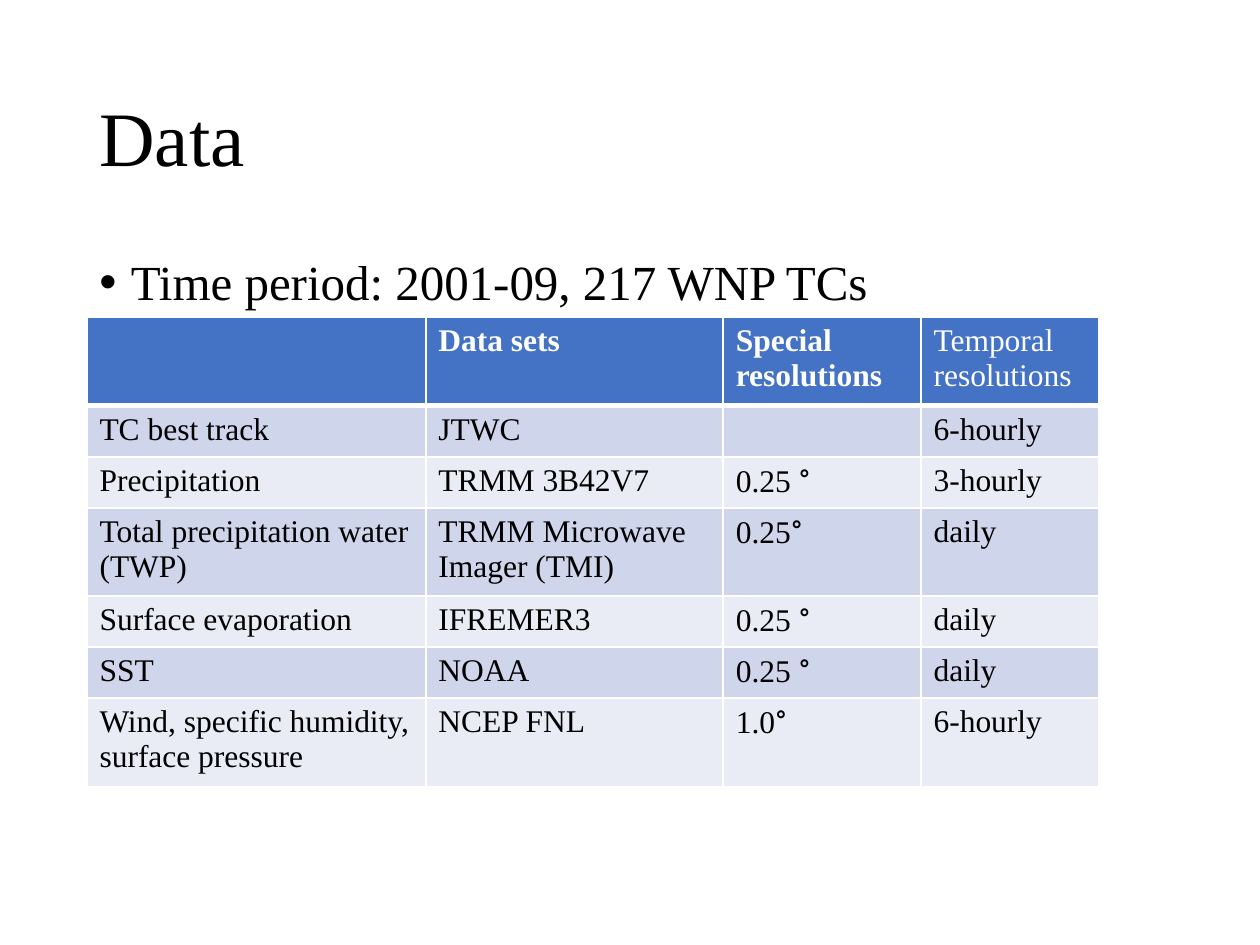
from dataclasses import dataclass

from lxml import etree
from pptx import Presentation
from pptx.dml.color import RGBColor
from pptx.enum.text import MSO_ANCHOR, PP_ALIGN
from pptx.oxml.ns import qn
from pptx.util import Inches, Pt

MIDDLE = MSO_ANCHOR.MIDDLE
TOP = MSO_ANCHOR.TOP
JUSTIFY = PP_ALIGN.JUSTIFY

SLIDE_WIDTH, SLIDE_HEIGHT = Inches(10), Inches(7.5)
MARGIN = 0.069  # share of the slide's width
SERIF, DEGREE_FONT = "Times New Roman", "Roboto"
BLACK, WHITE = "000000", "FFFFFF"
HEADER_FILL = "4472C4"
BAND_FILLS = ("CFD5EA", "E9EBF5")
COLUMN_WIDTHS = (2.69, 2.36, 1.57, 1.41)
ONE_LINE, TWO_LINES = 0.405, 0.65
DEGREE = "°"


@dataclass(frozen=True)
class DataSource:
    variable: str
    data_set: str
    spatial: str
    temporal: str
    height: float = ONE_LINE

    def cells(self) -> tuple[str, ...]:
        return self.variable, self.data_set, self.spatial, self.temporal


HEADER = DataSource("", "Data sets", "Special resolutions", "Temporal resolutions", TWO_LINES)
SOURCES = (
    DataSource("TC best track", "JTWC", "", "6-hourly"),
    DataSource("Precipitation", "TRMM 3B42V7", "0.25 °", "3-hourly"),
    DataSource("Total precipitation water\n(TWP)", "TRMM Microwave Imager (TMI)",
               "0.25°", "daily", TWO_LINES),
    DataSource("Surface evaporation", "IFREMER3", "0.25 °", "daily"),
    DataSource("SST", "NOAA", "0.25 °", "daily"),
    DataSource("Wind, specific humidity, surface pressure", "NCEP FNL",
               "1.0°", "6-hourly", TWO_LINES),
)


def rgb(hex_code: str) -> RGBColor:
    return RGBColor.from_string(hex_code)


def style_run(run, size: float, color: str, bold: bool = False, font: str = SERIF) -> None:
    run.font.name = font
    run.font.size = Pt(size)
    run.font.bold = bold
    run.font.color.rgb = rgb(color)


def add_heading(slide, text: str, top: float, height: float, size: float, anchor):
    """Add a text box across the slide, top and height as shares; return its paragraph."""
    box = slide.shapes.add_textbox(
        int(MARGIN * SLIDE_WIDTH), int(top * SLIDE_HEIGHT),
        int((1 - 2 * MARGIN) * SLIDE_WIDTH), int(height * SLIDE_HEIGHT))
    frame = box.text_frame
    frame.word_wrap = True
    frame.vertical_anchor = anchor
    frame.text = text
    paragraph = frame.paragraphs[0]
    paragraph.line_spacing = 0.9
    style_run(paragraph.runs[0], size, BLACK)
    return paragraph


def add_bullet(paragraph, indent: float) -> None:
    properties = paragraph._p.get_or_add_pPr()
    properties.set("marL", str(Inches(indent)))
    properties.set("indent", str(-Inches(indent)))
    etree.SubElement(properties, qn("a:buFont"), typeface="Arial")
    etree.SubElement(properties, qn("a:buChar"), char="•")


def set_borders(cell, top: float, bottom: float) -> None:
    """Draw white borders; the side borders are one point wide."""
    properties = cell._tc.get_or_add_tcPr()
    for side, width in (("L", 1), ("R", 1), ("T", top), ("B", bottom)):
        line = etree.SubElement(properties, qn(f"a:ln{side}"), w=str(Pt(width)))
        fill = etree.SubElement(line, qn("a:solidFill"))
        etree.SubElement(fill, qn("a:srgbClr"), val=WHITE)


def fill_cell(cell, text: str, fill: str, color: str, bold: bool) -> None:
    cell.fill.solid()
    cell.fill.fore_color.rgb = rgb(fill)
    cell.text_frame.text = text
    for paragraph in cell.text_frame.paragraphs:
        if paragraph.text.endswith(DEGREE):
            number = paragraph.text.rstrip(DEGREE).rstrip()
            symbol = paragraph.text[len(number):]
            paragraph.text = number
            paragraph.add_run().text = symbol
        for run in paragraph.runs:
            font = DEGREE_FONT if DEGREE in run.text else SERIF
            style_run(run, 18, color, bold, font)


def add_source_table(slide, top: float) -> None:
    rows = (HEADER, *SOURCES)
    table = slide.shapes.add_table(
        len(rows), len(COLUMN_WIDTHS),
        int(MARGIN * SLIDE_WIDTH), int(top * SLIDE_HEIGHT),
        Inches(sum(COLUMN_WIDTHS)), Inches(sum(row.height for row in rows))).table
    for column, width in zip(table.columns, COLUMN_WIDTHS):
        column.width = Inches(width)
    for r, source in enumerate(rows):
        table.rows[r].height = Inches(source.height)
        is_header = r == 0
        fill = HEADER_FILL if is_header else BAND_FILLS[(r - 1) % 2]
        for c, text in enumerate(source.cells()):
            cell = table.cell(r, c)
            set_borders(cell, top=3 if r == 1 else 1, bottom=3 if is_header else 1)
            bold = is_header and text != HEADER.temporal
            fill_cell(cell, text, fill, WHITE if is_header else BLACK, bold)


def main() -> None:
    presentation = Presentation()
    presentation.slide_width, presentation.slide_height = SLIDE_WIDTH, SLIDE_HEIGHT
    slide = presentation.slides.add_slide(presentation.slide_layouts[6])
    add_heading(slide, "Data", top=0.053, height=0.193, size=44, anchor=MIDDLE)
    period = add_heading(slide, "Time period: 2001-09, 217 WNP TCs",
                         top=0.267, height=0.635, size=28, anchor=TOP)
    period.alignment = JUSTIFY
    period.space_before = Pt(10)
    add_bullet(period, indent=0.25)
    add_source_table(slide, top=0.336)
    presentation.save("out.pptx")


if __name__ == "__main__":
    main()
